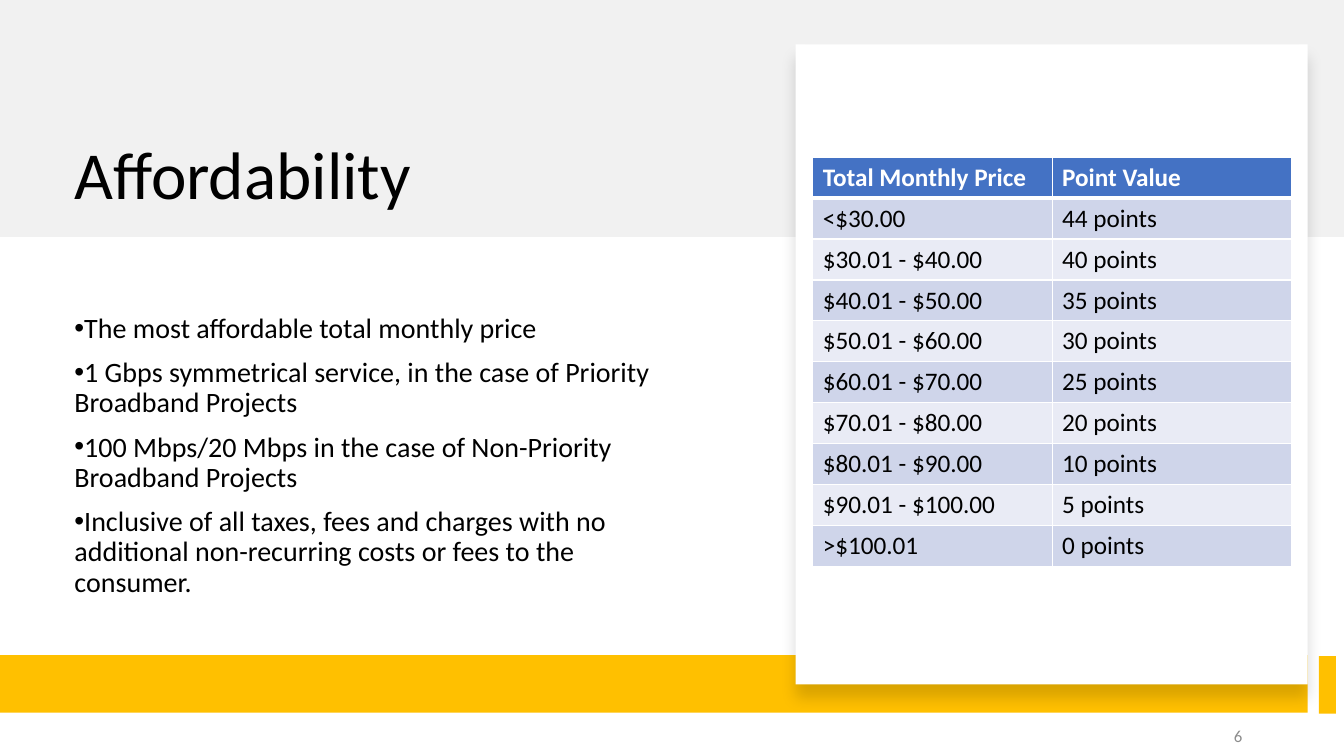
from dataclasses import dataclass
from typing import Any, NamedTuple

import pptx
import pptx.dml.color
import pptx.enum.shapes
import pptx.enum.text
import pptx.oxml
import pptx.oxml.ns
import pptx.util

ALIGN = pptx.enum.text.PP_ALIGN
ANCHOR = pptx.enum.text.MSO_ANCHOR
SLIDE_WIDTH = pptx.util.Inches(13.33)
SLIDE_HEIGHT = pptx.util.Inches(7.5)


@dataclass(frozen=True)
class Theme:
    font: str = "Calibri"
    black: str = "000000"
    white: str = "FFFFFF"
    gray: str = "D9D9D9"
    gold: str = "FFC000"
    header: str = "4472C4"
    bands: tuple[str, str] = ("CFD5EA", "E9EBF5")
    muted: str = "8C8C8C"
    title_size: int = 48
    body_size: int = 20
    table_size: int = 18
    number_size: int = 12


class Area(NamedTuple):
    """Position and size in percent of the slide's width and height."""
    left: float
    top: float
    width: float
    height: float

    def lengths(self) -> tuple[int, int, int, int]:
        return (round(SLIDE_WIDTH * self.left / 100), round(SLIDE_HEIGHT * self.top / 100),
                round(SLIDE_WIDTH * self.width / 100), round(SLIDE_HEIGHT * self.height / 100))


@dataclass(frozen=True)
class Block:
    area: Area
    color: str
    opacity: int = 100
    shadow: bool = False


@dataclass(frozen=True)
class Words:
    area: Area
    lines: tuple[str, ...]
    size: int
    color: str
    anchor: Any = ANCHOR.MIDDLE
    align: Any = ALIGN.LEFT
    line_spacing: float = 1.0
    before: int = 0
    after: int = 0
    bullets: bool = False


class PriceRow(NamedTuple):
    price: str
    points: str


THEME = Theme()

BLOCKS = (
    Block(Area(0, 0, 100, 31.33), THEME.gray, opacity=35),
    Block(Area(0, 86.67, 97.3, 7.6), THEME.gold),
    Block(Area(59.19, 5.87, 38.11, 84.67), THEME.white, shadow=True),
    Block(Area(98.12, 86.8, 1.28, 7.6), THEME.gold),
)

TEXTS = (
    Words(Area(4.8, 5.07, 47.93, 23.87), ("Affordability",), THEME.title_size, THEME.black,
          anchor=ANCHOR.BOTTOM, line_spacing=0.9),
    Words(Area(4.8, 38.27, 47.86, 44.13), (
        "The most affordable total monthly price",
        "1 Gbps symmetrical service, in the case of Priority Broadband Projects",
        "100 Mbps/20 Mbps in the case of Non-Priority Broadband Projects",
        "Inclusive of all taxes, fees and charges with no additional non-recurring costs"
        " or fees to the consumer.",
    ), THEME.body_size, THEME.black, line_spacing=0.9, before=10, bullets=True),
    Words(Area(70.67, 94.67, 22.5, 5.33), ("6",), THEME.number_size, THEME.muted,
          align=ALIGN.RIGHT, after=6),
)

TABLE_AREA = Area(60.47, 20.8, 35.63, 54.13)
PRICES = (
    PriceRow("Total Monthly Price", "Point Value"),
    PriceRow("<$30.00", "44 points"),
    PriceRow("$30.01 - $40.00", "40 points"),
    PriceRow("$40.01 - $50.00", "35 points"),
    PriceRow("$50.01 - $60.00", "30 points"),
    PriceRow("$60.01 - $70.00", "25 points"),
    PriceRow("$70.01 - $80.00", "20 points"),
    PriceRow("$80.01 - $90.00", "10 points"),
    PriceRow("$90.01 - $100.00", "5 points"),
    PriceRow(">$100.01", "0 points"),
)


def rgb(color: str) -> pptx.dml.color.RGBColor:
    return pptx.dml.color.RGBColor.from_string(color)


def element(xml: str) -> Any:
    """Parse one drawing element, adding the namespace to its first tag."""
    name, rest = xml.split(" ", 1)
    return pptx.oxml.parse_xml(f"{name} {pptx.oxml.ns.nsdecls('a')} {rest}")


def add_span(para: Any, text: str, size: int, color: str, bold: bool = False) -> None:
    span = para.add_run()
    span.text = text
    span.font.name = THEME.font
    span.font.size = pptx.util.Pt(size)
    span.font.bold = bold
    span.font.color.rgb = rgb(color)


def add_block(page: Any, block: Block) -> None:
    box = page.shapes.add_shape(pptx.enum.shapes.MSO_SHAPE.RECTANGLE, *block.area.lengths())
    box.shadow.inherit = False
    box.fill.solid()
    box.fill.fore_color.rgb = rgb(block.color)
    box.line.fill.background()
    properties = box._element.spPr
    if block.opacity < 100:
        fill_color = properties.find(".//" + pptx.oxml.ns.qn("a:srgbClr"))
        fill_color.append(element(f'<a:alpha val="{block.opacity * 1000}"/>'))
    if block.shadow:
        blur, distance = pptx.util.Pt(11), pptx.util.Pt(10)
        properties.find(pptx.oxml.ns.qn("a:effectLst")).append(element(
            f'<a:outerShdw blurRad="{blur}" dist="{distance}" dir="5400000" rotWithShape="0">'
            f'<a:srgbClr val="{THEME.black}"><a:alpha val="15000"/></a:srgbClr></a:outerShdw>'))


def add_words(page: Any, words: Words) -> None:
    frame = page.shapes.add_textbox(*words.area.lengths()).text_frame
    frame.word_wrap = True
    frame.vertical_anchor = words.anchor
    for index, line in enumerate(words.lines):
        para = frame.add_paragraph() if index else frame.paragraphs[0]
        para.alignment = words.align
        para.line_spacing = words.line_spacing
        para.space_before = pptx.util.Pt(words.before)
        para.space_after = pptx.util.Pt(words.after)
        if words.bullets:
            settings = para._p.get_or_add_pPr()
            settings.set("marL", "0")
            settings.set("indent", str(-pptx.util.Inches(0.25)))
            settings.append(element('<a:buFont typeface="Arial"/>'))
            settings.append(element('<a:buChar char="•"/>'))
        add_span(para, line, words.size, words.color)


def style_cell(cell: Any, fill: str, top: int, bottom: int) -> None:
    settings = cell._tc.get_or_add_tcPr()
    for side, points in (("L", 1), ("R", 1), ("T", top), ("B", bottom)):
        settings.append(element(
            f'<a:ln{side} w="{pptx.util.Pt(points)}"><a:solidFill>'
            f'<a:srgbClr val="{THEME.white}"/></a:solidFill></a:ln{side}>'))
    cell.fill.solid()
    cell.fill.fore_color.rgb = rgb(fill)


def add_prices(page: Any, area: Area, rows: tuple[PriceRow, ...]) -> None:
    columns = len(PriceRow._fields)
    table = page.shapes.add_table(len(rows), columns, *area.lengths()).table
    for row_index, row in enumerate(rows):
        is_header = row_index == 0
        fill = THEME.header if is_header else THEME.bands[(row_index - 1) % 2]
        color = THEME.white if is_header else THEME.black
        for column_index, text in enumerate(row):
            cell = table.cell(row_index, column_index)
            style_cell(cell, fill, 3 if row_index == 1 else 1, 3 if is_header else 1)
            add_span(cell.text_frame.paragraphs[0], text, THEME.table_size, color, is_header)


def main() -> None:
    deck = pptx.Presentation()
    deck.slide_width, deck.slide_height = SLIDE_WIDTH, SLIDE_HEIGHT
    page = deck.slides.add_slide(deck.slide_layouts[6])
    # Background bands and the raised panel
    for block in BLOCKS:
        add_block(page, block)
    # Title, bullet list and page number
    for words in TEXTS:
        add_words(page, words)
    # Price table on the panel
    add_prices(page, TABLE_AREA, PRICES)
    deck.save("out.pptx")


if __name__ == "__main__":
    main()
